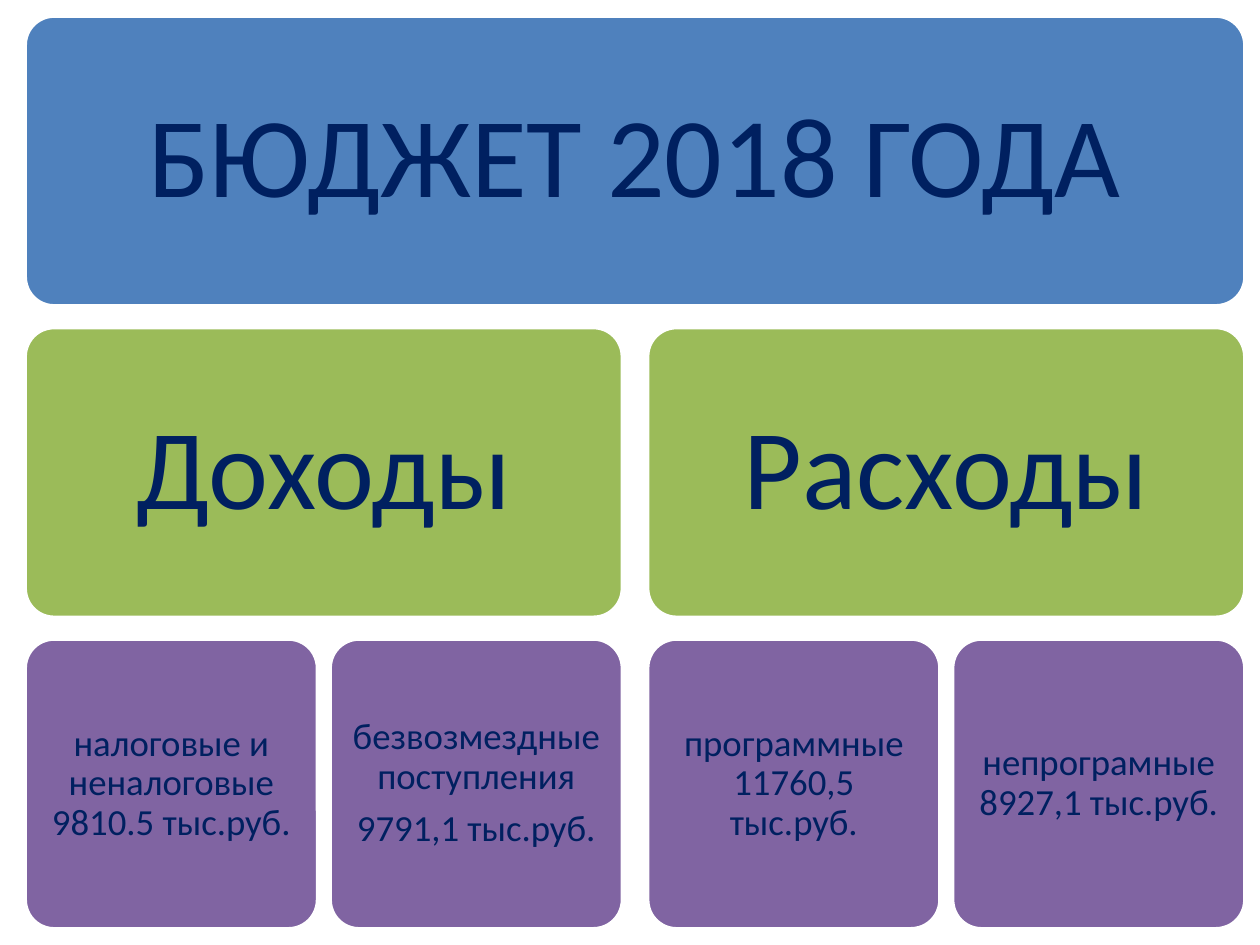
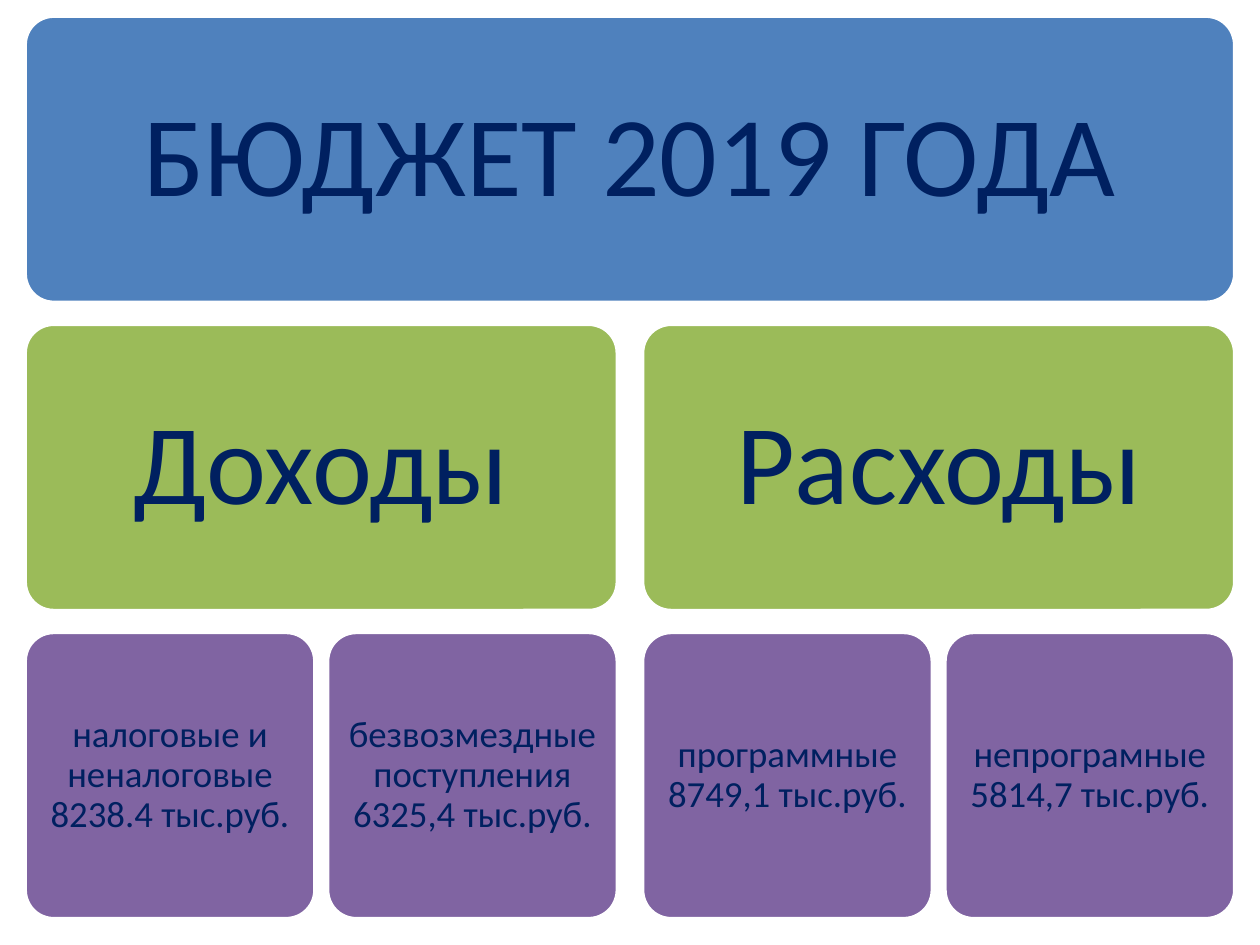
"""Build two budget slides, each a three-level tree of rounded blocks."""
from dataclasses import dataclass

import pptx
import pptx.dml.color
import pptx.enum.shapes
import pptx.enum.text
import pptx.presentation
import pptx.slide
import pptx.util

Pt = pptx.util.Pt
RGB = pptx.dml.color.RGBColor

BLUE = RGB(0x4F, 0x81, 0xBD)
GREEN = RGB(0x9B, 0xBB, 0x59)
PURPLE = RGB(0x80, 0x64, 0xA2)
NAVY = RGB(0x00, 0x20, 0x60)
WHITE = RGB(0xFF, 0xFF, 0xFF)

FONT = "Calibri"
LEFT, TOP = 14.4, 9.2
SIDE_GAP, LEAF_GAP = 14.4, 7.2
SIDES = ("Доходы", "Расходы")


@dataclass(frozen=True)
class Style:
    """Look of one level of the tree."""
    fill: RGB
    size: float
    inset: float


@dataclass(frozen=True)
class Budget:
    """One year's wording and the size of its tree."""
    title: str
    leaves: tuple[tuple[str, str], tuple[str, str]]
    width: float
    height: float
    pitch: float


HEAD = Style(BLUE, 65, 19.5)
SIDE = Style(GREEN, 65, 19.5)
LEAF = Style(PURPLE, 21, 6.3)

BUDGETS = (
    Budget("БЮДЖЕТ 2018 ГОДА",
           (("налоговые и неналоговые 9810.5 тыс.руб.",
             "безвозмездные поступления\n9791,1 тыс.руб."),
            ("программные 11760,5 тыс.руб.",
             "непрограмные 8927,1 тыс.руб.")),
           697, 165.6, 178),
    Budget("БЮДЖЕТ 2019 ГОДА",
           (("налоговые и неналоговые 8238.4 тыс.руб.",
             "безвозмездные поступления 6325,4 тыс.руб."),
            ("программные 8749,1 тыс.руб.",
             "непрограмные 5814,7 тыс.руб.")),
           691.2, 163.6, 176.1),
)


def add_block(slide: pptx.slide.Slide, text: str, style: Style,
              left: float, top: float, width: float, height: float) -> None:
    """Draw a rounded block with centred text."""
    block = slide.shapes.add_shape(
        pptx.enum.shapes.MSO_SHAPE.ROUNDED_RECTANGLE,
        Pt(left), Pt(top), Pt(width), Pt(height))
    block.adjustments[0] = 0.1
    block.shadow.inherit = False
    block.fill.solid()
    block.fill.fore_color.rgb = style.fill
    block.line.color.rgb = WHITE
    block.line.width = Pt(2)

    frame = block.text_frame
    frame.word_wrap = True
    frame.vertical_anchor = pptx.enum.text.MSO_ANCHOR.MIDDLE
    frame.margin_left = frame.margin_right = Pt(style.inset)
    frame.margin_top = frame.margin_bottom = Pt(style.inset)
    frame.text = text
    for para in frame.paragraphs:
        para.alignment = pptx.enum.text.PP_ALIGN.CENTER
        para.line_spacing = 0.9
        para.space_after = Pt(0.35 * style.size)
        for run in para.runs:
            run.font.name = FONT
            run.font.size = Pt(style.size)
            run.font.color.rgb = NAVY


def split(left: float, width: float, gap: float) -> tuple[float, list[float]]:
    """Halve a span around a gap, giving the part width and left edges."""
    part = (width - gap) / 2
    return part, [left, left + part + gap]


def add_budget(deck: pptx.presentation.Presentation, budget: Budget) -> None:
    """Add a slide with the tree of one budget."""
    slide = deck.slides.add_slide(deck.slide_layouts[6])
    rows = [TOP + level * budget.pitch for level in range(3)]
    high = budget.height
    add_block(slide, budget.title, HEAD, LEFT, rows[0], budget.width, high)
    wide, edges = split(LEFT, budget.width, SIDE_GAP)
    for side, left, leaves in zip(SIDES, edges, budget.leaves):
        add_block(slide, side, SIDE, left, rows[1], wide, high)
        part, starts = split(left, wide, LEAF_GAP)
        for leaf, start in zip(leaves, starts):
            add_block(slide, leaf, LEAF, start, rows[2], part, high)


def main() -> None:
    """Build and save the deck."""
    deck = pptx.Presentation()
    deck.slide_width, deck.slide_height = Pt(720), Pt(540)
    for budget in BUDGETS:
        add_budget(deck, budget)
    deck.save("out.pptx")


if __name__ == "__main__":
    main()
